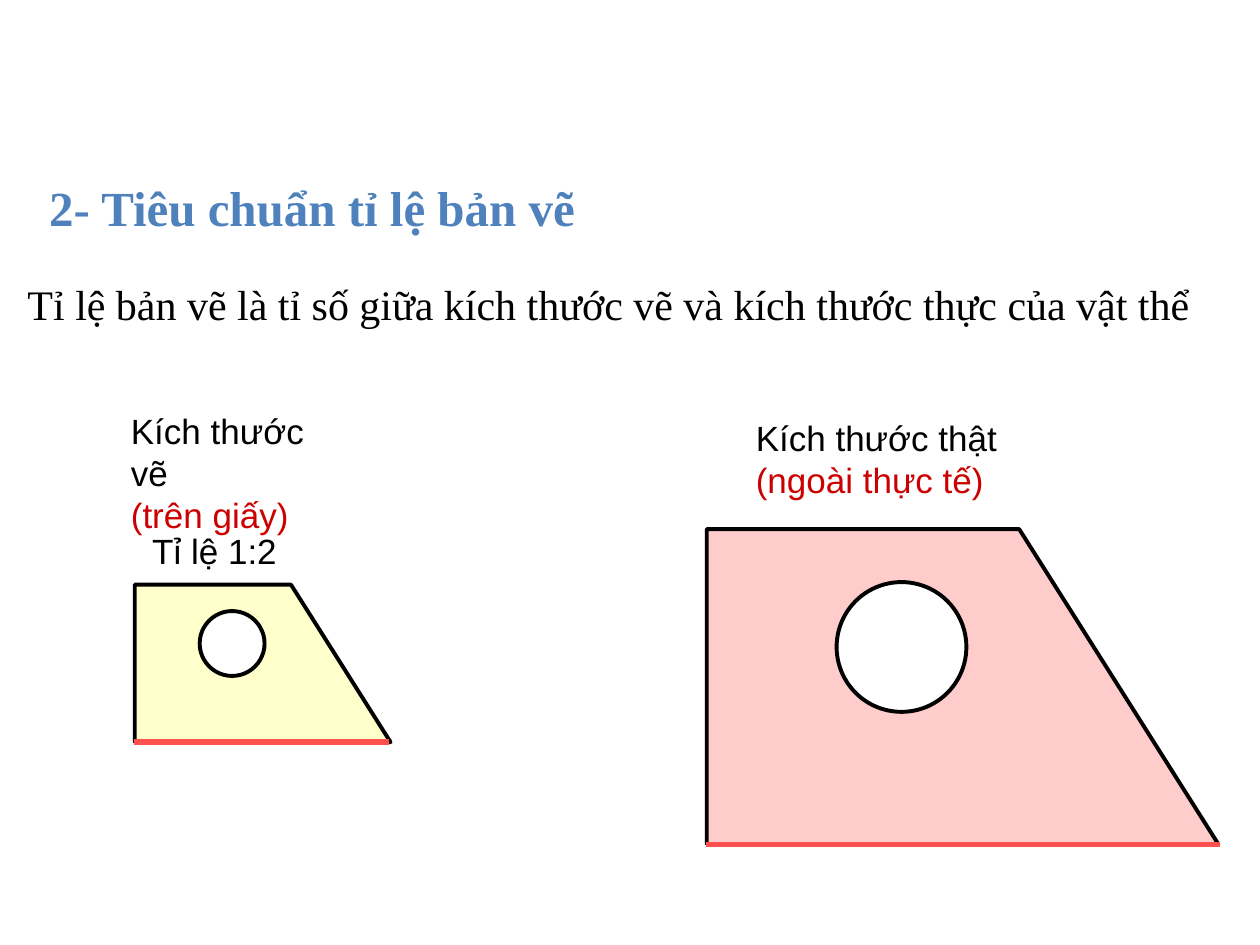
import pptx
import pptx.util
import pptx.dml.color
import pptx.enum.shapes
import pptx.enum.text
import lxml.etree
from pptx.util import Inches

INK = {
    "title": "4F81BD", "text": "000000", "note": "CC0000", "line": "000000",
    "base": "FF5050", "hole": "FFFFFF", "real": "FFCCCC", "drawn": "FFFFCC",
}


def color(name):
    """Return the named colour."""
    return pptx.dml.color.RGBColor.from_string(INK[name])


def add_run(para, text, font, size, ink, bold=False):
    """Add one styled run to a paragraph."""
    run = para.add_run()
    run.text = text
    run.font.name = font
    run.font.size = pptx.util.Pt(size)
    run.font.bold = bold
    run.font.color.rgb = color(ink)


def set_title(slide, text):
    """Place and fill the title."""
    title = slide.shapes.title
    title.left, title.top = Inches(0.29), Inches(1.25)
    title.width, title.height = Inches(9.41), Inches(0.79)
    frame = title.text_frame
    frame.auto_size = pptx.enum.text.MSO_AUTO_SIZE.NONE
    frame.vertical_anchor = pptx.enum.text.MSO_ANCHOR.MIDDLE
    para = frame.paragraphs[0]
    para.alignment = pptx.enum.text.PP_ALIGN.LEFT
    add_run(para, text, "Times New Roman", 28, "title", True)


def add_text(slide, box, lines, font="Arial", size=20, space=1.0):
    """Add a text box with one paragraph per (text, ink) line."""
    frame = slide.shapes.add_textbox(*map(Inches, box)).text_frame
    frame.word_wrap = True
    for i, (text, ink) in enumerate(lines):
        para = frame.add_paragraph() if i else frame.paragraphs[0]
        para.line_spacing = space
        add_run(para, text, font, size, ink)


def style(shape, fill):
    """Give a shape its fill and outline."""
    shape.shadow.inherit = False
    shape.fill.solid()
    shape.fill.fore_color.rgb = color(fill)
    shape.line.color.rgb = color("line")
    shape.line.width = pptx.util.Pt(2.25)


def add_plate(slide, left, top, scale, fill):
    """Add a plate with a round hole, drawn at a scale."""
    def spot(x, y):
        """Map a point of the full-size plate to the slide."""
        return Inches(left + x * scale), Inches(top + y * scale)

    group = slide.shapes.add_group_shape()
    path = group.shapes.build_freeform(*spot(0, 0), scale=1.0)
    path.add_line_segments([spot(2.48, 0), spot(4.06, 2.5), spot(0, 2.5)])
    style(path.convert_to_shape(), fill)
    side = Inches(1.03 * scale)
    oval = pptx.enum.shapes.MSO_SHAPE.OVAL
    hole = group.shapes.add_shape(oval, *spot(1.03, 0.42), side, side)
    style(hole, "hole")


def add_base(slide, left, right, y):
    """Add the highlighted bottom edge of a plate."""
    kind = pptx.enum.shapes.MSO_CONNECTOR.STRAIGHT
    line = slide.shapes.add_connector(
        kind, Inches(left), Inches(y), Inches(right), Inches(y))
    line.line.color.rgb = color("base")
    line.line.width = pptx.util.Pt(3)
    tag = pptx.oxml.ns.qn("a:effectLst")
    lxml.etree.SubElement(line._element.spPr, tag)


def main():
    """Build and save the slide."""
    deck = pptx.Presentation()
    deck.slide_width, deck.slide_height = Inches(10), Inches(7.5)
    slide = deck.slides.add_slide(deck.slide_layouts[5])
    set_title(slide, "2- Tiêu chuẩn tỉ lệ bản vẽ")
    add_text(slide, (0.12, 2, 9.83, 0.67), [(
        "Tỉ lệ bản vẽ là tỉ số giữa kích thước vẽ và kích thước thực của vật thể",
        "text")], "Times New Roman", 24, 1.4)
    add_text(slide, (0.94, 3.2, 1.91, 0.77),
             [("Kích thước vẽ", "text"), ("(trên giấy)", "note")])
    add_text(slide, (5.9, 3.26, 2.13, 0.77),
             [("Kích thước thật", "text"), ("(ngoài thực tế)", "note")])
    add_plate(slide, 5.61, 4.2, 1, "real")
    add_plate(slide, 1.07, 4.64, 0.5, "drawn")
    add_base(slide, 1.06, 3.09, 5.89)
    add_base(slide, 5.6, 9.68, 6.7)
    add_text(slide, (1.11, 4.15, 1.2, 0.44), [("Tỉ lệ 1:2", "text")])
    deck.save("out.pptx")


if __name__ == "__main__":
    main()
